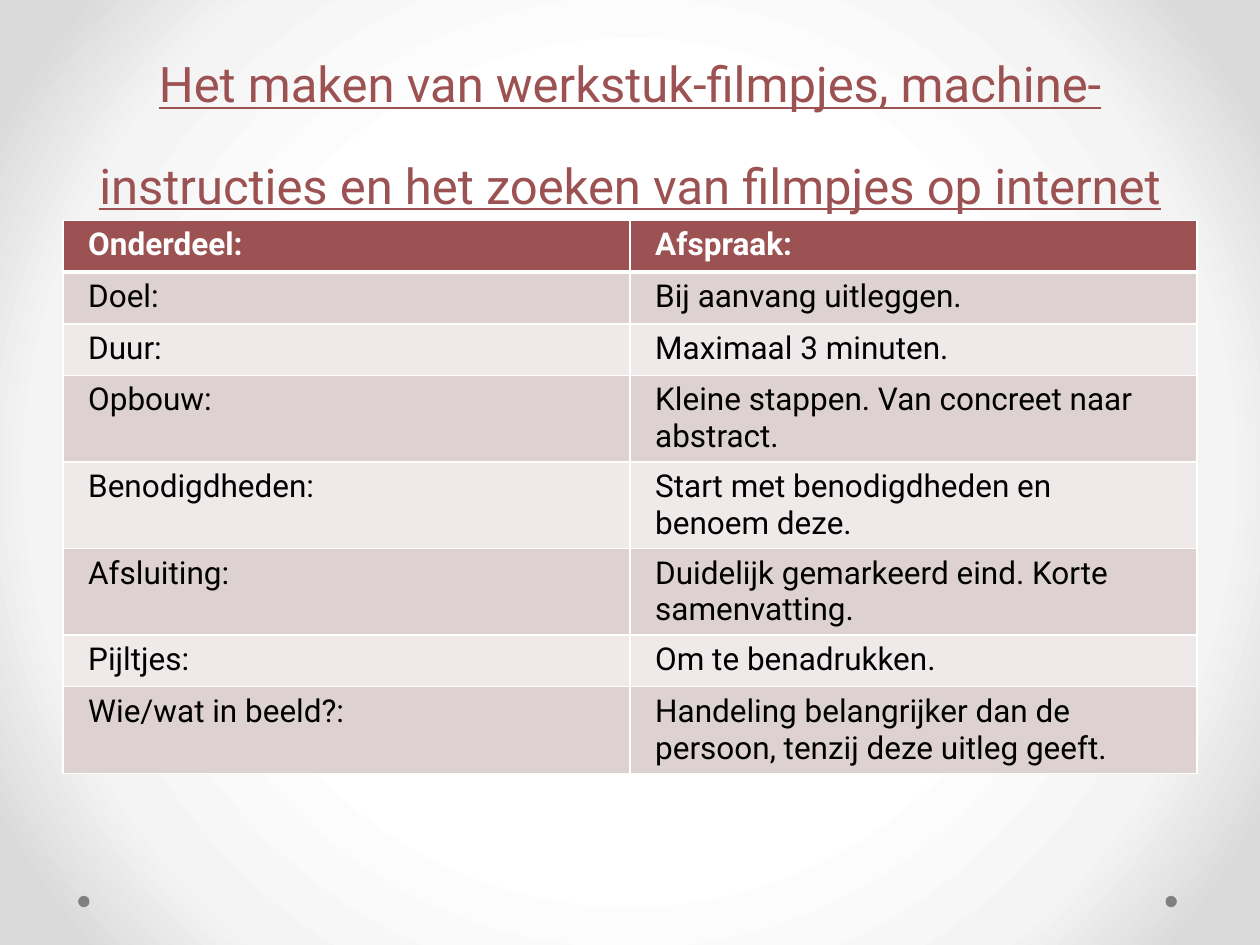
import pptx
import pptx.util
import pptx.dml.color
import pptx.enum.shapes
import pptx.enum.text
import pptx.oxml
import pptx.oxml.ns
from pptx.util import Inches

NS = pptx.oxml.ns.nsdecls("a")


def color(hex_code):
    return pptx.dml.color.RGBColor.from_string(hex_code)


def add_border(cell, side, points):
    cell._tc.get_or_add_tcPr().append(pptx.oxml.parse_xml(
        f'<a:{side} {NS} w="{points * 12700}"><a:solidFill>'
        f'<a:srgbClr val="FFFFFF"/></a:solidFill></a:{side}>'))


prs = pptx.Presentation()
prs.slide_width, prs.slide_height = Inches(10), Inches(7.5)
slide = prs.slides.add_slide(prs.slide_layouts[5])

# Radial background
slide.background.fill.gradient()
gradient = next(slide.element.iter(pptx.oxml.ns.qn("a:gradFill")))
for child in list(gradient):
    gradient.remove(child)
stops = "".join(
    f'<a:gs pos="{position * 1000}"><a:srgbClr val="{shade}"/></a:gs>'
    for position, shade in [(50, "FFFFFF"), (76, "F4F4F4"), (92, "DADADA")])
gradient.append(pptx.oxml.parse_xml(f"<a:gsLst {NS}>{stops}</a:gsLst>"))
gradient.append(pptx.oxml.parse_xml(
    f'<a:path {NS} path="circle"><a:fillToRect l="50000" t="50000" '
    'r="50000" b="50000"/></a:path>'))

# Corner dots
for left in (9.25, 0.62):
    dot = slide.shapes.add_shape(
        pptx.enum.shapes.MSO_SHAPE.OVAL,
        Inches(left), Inches(7.11), Inches(0.09), Inches(0.09))
    dot.shadow.inherit = False
    dot.fill.solid()
    dot.fill.fore_color.rgb = color("808080")
    dot.line.fill.background()

# Title
title = slide.shapes.title
title.left, title.top = Inches(0.5), Inches(0)
title.width, title.height = Inches(9), Inches(1.75)
title.text_frame.text = ("Het maken van werkstuk-filmpjes, machine-instructies "
                         "en het zoeken van filmpjes op internet")
title.text_frame.vertical_anchor = pptx.enum.text.MSO_ANCHOR.BOTTOM
heading = title.text_frame.paragraphs[0]
heading.alignment = pptx.enum.text.PP_ALIGN.CENTER
heading.line_spacing = pptx.util.Pt(58)
heading.font.name = "Roboto"
heading.font.size = pptx.util.Pt(28)
heading.font.underline = True
heading.font.color.rgb = color("9C5252")

# Table of agreements
agreements = [
    ("Onderdeel:", "Afspraak:"),
    ("Doel:", "Bij aanvang uitleggen."),
    ("Duur:", "Maximaal 3 minuten."),
    ("Opbouw:", "Kleine stappen. Van concreet naar abstract."),
    ("Benodigdheden:", "Start met benodigdheden en benoem deze."),
    ("Afsluiting:", "Duidelijk gemarkeerd eind. Korte samenvatting."),
    ("Pijltjes:", "Om te benadrukken."),
    ("Wie/wat in beeld?:",
     "Handeling belangrijker dan de persoon, tenzij deze uitleg geeft."),
]
row_height = Inches(0.41)
table = slide.shapes.add_table(
    len(agreements), 2, Inches(0.5), Inches(1.75),
    Inches(9), row_height * len(agreements)).table

for row, texts in enumerate(agreements):
    table.rows[row].height = row_height
    is_header = row == 0
    band = "9C5252" if is_header else ("EFE9E9", "DED1D1")[row % 2]
    for column, text in enumerate(texts):
        cell = table.cell(row, column)
        cell.margin_left = cell.margin_right = Inches(0.2)
        add_border(cell, "lnL", 1)
        add_border(cell, "lnR", 1)
        add_border(cell, "lnT", 3 if row == 1 else 1)
        add_border(cell, "lnB", 3 if is_header else 1)
        cell.fill.solid()
        cell.fill.fore_color.rgb = color(band)
        cell.text = text
        font = cell.text_frame.paragraphs[0].font
        font.name = "Roboto"
        font.size = pptx.util.Pt(18)
        font.bold = is_header
        font.color.rgb = color("FFFFFF" if is_header else "000000")

prs.save("out.pptx")
